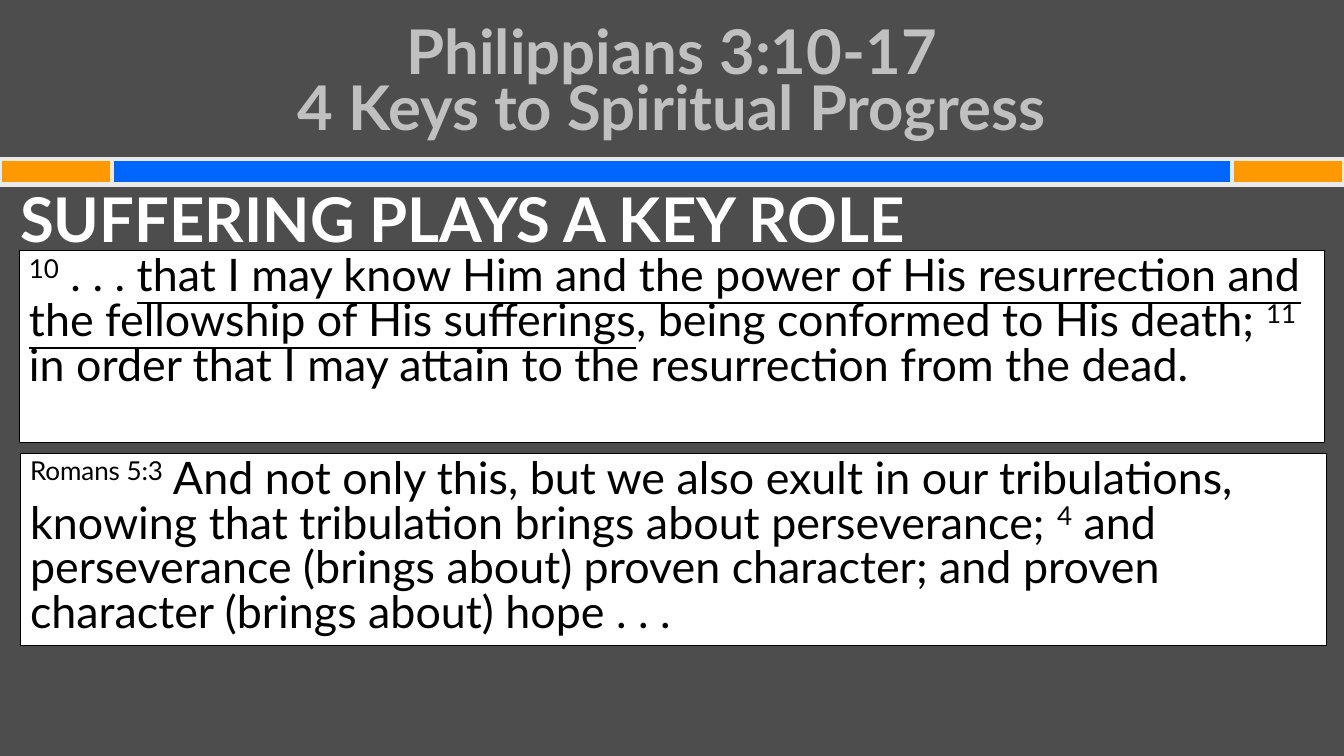
from pptx import Presentation
from pptx import util as u
from pptx.dml.color import RGBColor
from pptx.enum import shapes, text
from pptx.oxml.ns import qn
from lxml import etree

DARK = RGBColor(0x4D, 0x4D, 0x4D)
SILVER = RGBColor(0xC0, 0xC0, 0xC0)
PALE = RGBColor(0xEA, 0xEA, 0xEA)
WHITE = RGBColor(0xFF, 0xFF, 0xFF)
BLACK = RGBColor(0x00, 0x00, 0x00)
BLUE = RGBColor(0x00, 0x66, 0xFF)
ORANGE = RGBColor(0xFF, 0x99, 0x00)

COLS, ROWS = 12, 30

PHILIPPIANS = [
    ("10", "super"),
    (" . . . ", ""),
    ("that I may know Him and the power of His resurrection and "
     "the fellowship of His sufferings", "underline"),
    (", being conformed to His death; ", ""),
    ("11", "super"),
    (" in order that I may attain to the resurrection from the dead.", ""),
]
ROMANS = [
    ("Romans 5:3", "super"),
    (" And not only this, but we also exult in our tribulations, "
     "knowing that tribulation brings about perseverance; ", ""),
    ("4", "super"),
    (" and perseverance (brings about) proven character; and proven "
     "character (brings about) hope . . .", ""),
]


class VerseSlide:
    font = "Lato"
    heading_size = u.Pt(44)
    verse_size = u.Pt(32)

    def __init__(self, prs):
        self.col = prs.slide_width / COLS
        self.row = prs.slide_height / ROWS
        self.slide = prs.slides.add_slide(prs.slide_layouts[1])
        fill = self.slide.background.fill
        fill.solid()
        fill.fore_color.rgb = DARK

    def cells(self, x, y, w, h):
        return (u.Emu(round(x * self.col)), u.Emu(round(y * self.row)),
                u.Emu(round(w * self.col)), u.Emu(round(h * self.row)))

    def run(self, p, words, size, color, bold=False, style=""):
        r = p.add_run()
        r.text = words
        r.font.name = self.font
        r.font.size = size
        r.font.bold = bold
        r.font.color.rgb = color
        if style == "underline":
            r.font.underline = True
        if style == "super":
            r._r.get_or_add_rPr().set("baseline", "30000")

    def place(self, sp, cells, anchor):
        sp.left, sp.top, sp.width, sp.height = self.cells(*cells)
        tf = sp.text_frame
        tf.word_wrap = True
        tf.auto_size = text.MSO_AUTO_SIZE.NONE
        tf.vertical_anchor = anchor
        return tf.paragraphs[0]

    def title(self, lines, *cells):
        p = self.place(self.slide.shapes.title, cells, text.MSO_ANCHOR.MIDDLE)
        p.alignment = text.PP_ALIGN.CENTER
        p.line_spacing = u.Pt(40)
        for i, line in enumerate(lines):
            if i:
                p.add_line_break()
            self.run(p, line, self.heading_size, SILVER, bold=True)

    def body(self, words, *cells):
        p = self.place(self.slide.placeholders[1], cells, text.MSO_ANCHOR.TOP)
        p.line_spacing = 0.7
        p.space_before = u.Pt(14.4)
        pPr = p._p.get_or_add_pPr()
        pPr.set("marL", str(u.Inches(0.38)))
        pPr.set("indent", str(-u.Inches(0.38)))
        etree.SubElement(pPr, qn("a:buNone"))
        self.run(p, words, self.heading_size, WHITE, bold=True)

    def rect(self, fill, line, weight, *cells):
        sp = self.slide.shapes.add_shape(
            shapes.MSO_SHAPE.RECTANGLE, *self.cells(*cells))
        sp.shadow.inherit = False
        sp.fill.solid()
        sp.fill.fore_color.rgb = fill
        sp.line.color.rgb = line
        sp.line.width = u.Pt(weight)
        return sp

    def verse(self, runs, *cells):
        sp = self.rect(WHITE, BLACK, 0.75, *cells)
        p = self.place(sp, cells, text.MSO_ANCHOR.TOP)
        p.alignment = text.PP_ALIGN.LEFT
        p.line_spacing = u.Pt(32)
        for words, style in runs:
            self.run(p, words, self.verse_size, BLACK, style=style)


def main():
    prs = Presentation()
    prs.slide_width, prs.slide_height = u.Inches(13.33), u.Inches(7.5)
    s = VerseSlide(prs)
    s.title(["Philippians 3:10-17", "4 Keys to Spiritual Progress"],
            0.6, 1.2, 10.8, 4.48)
    s.body("SUFFERING PLAYS A KEY ROLE", 0.09, 7.8, 11.66, 21.4)
    for fill, x, w in [(BLUE, 0, COLS), (ORANGE, 0, 1), (ORANGE, COLS - 1, 1)]:
        s.rect(fill, PALE, 3, x, 6.32, w, 1)
    s.verse(PHILIPPIANS, 0.17, 9.96, 11.66, 7.6)
    s.verse(ROMANS, 0.18, 18, 11.66, 7.6)
    prs.save("out.pptx")


if __name__ == "__main__":
    main()
